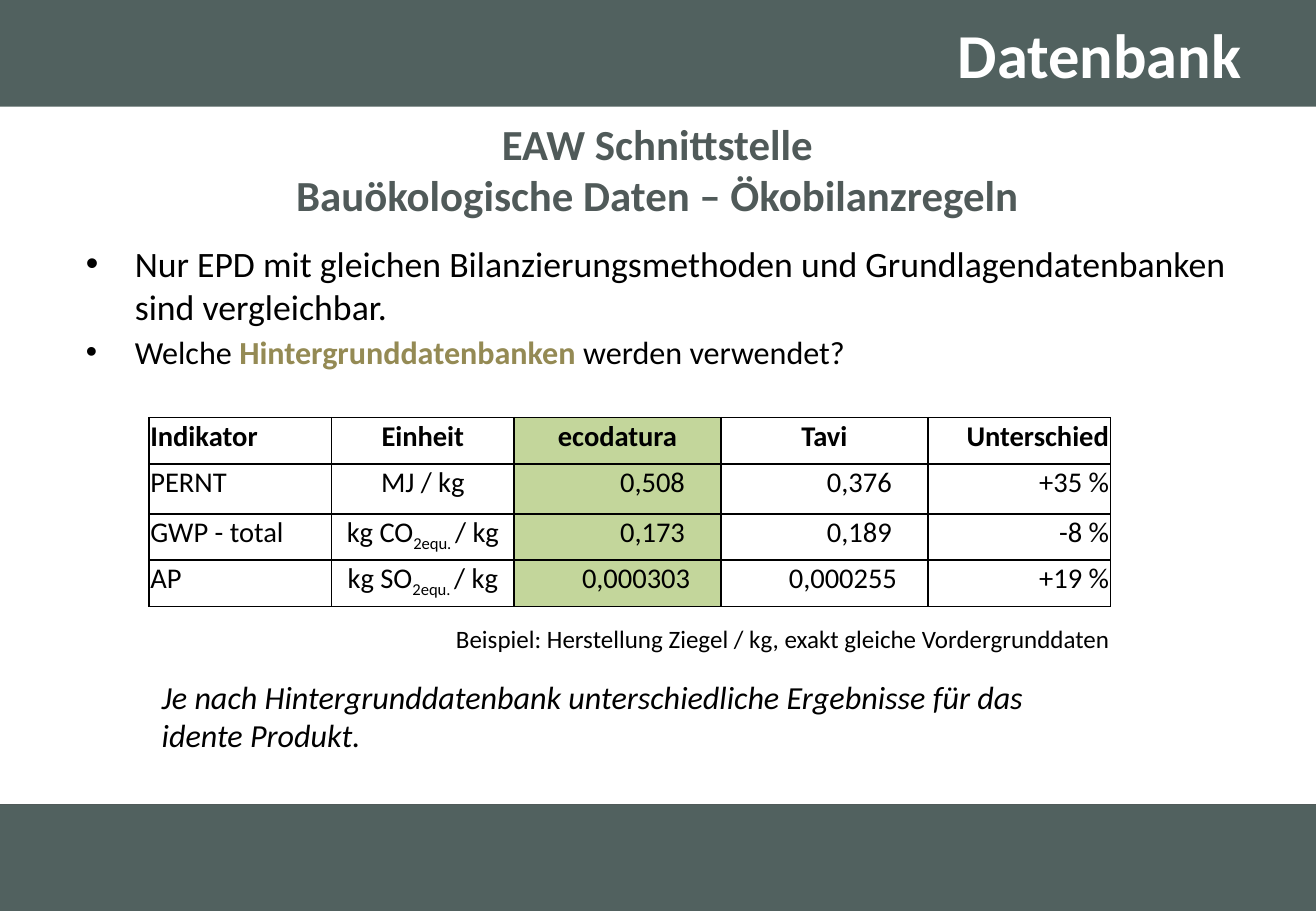
from lxml.etree import SubElement
from pptx import Presentation
from pptx.dml.color import RGBColor
from pptx.enum.shapes import MSO_CONNECTOR, MSO_SHAPE
from pptx.enum.text import MSO_ANCHOR, PP_ALIGN
from pptx.oxml.ns import qn
from pptx.util import Inches, Pt

SLATE, DARK_SLATE, OLIVE, GREEN = "51615F", "505A59", "948A54", "C3D69B"
BLACK, WHITE = "000000", "FFFFFF"
LEFT, CENTER, RIGHT = PP_ALIGN.LEFT, PP_ALIGN.CENTER, PP_ALIGN.RIGHT


def color(hex_code):
    return RGBColor.from_string(hex_code)


class SlideBuilder:
    """Draws on one slide; every length is a percentage of the slide's size."""

    font_name = "Calibri"

    def __init__(self, presentation):
        self.width = presentation.slide_width
        self.height = presentation.slide_height
        self.slide = presentation.slides.add_slide(presentation.slide_layouts[6])
        self.shapes = self.slide.shapes

    def x(self, percent):
        return round(self.width * percent / 100)

    def y(self, percent):
        return round(self.height * percent / 100)

    def box(self, left, top, width, height):
        return self.x(left), self.y(top), self.x(width), self.y(height)

    def band(self, top, height):
        band = self.shapes.add_shape(MSO_SHAPE.RECTANGLE, *self.box(0, top, 100, height))
        band.shadow.inherit = False
        band.fill.solid()
        band.fill.fore_color.rgb = color(SLATE)
        band.line.fill.background()

    def rule(self, top):
        rule = self.shapes.add_connector(
            MSO_CONNECTOR.STRAIGHT, 0, self.y(top), self.width, self.y(top))
        rule.line.color.rgb = color(DARK_SLATE)
        rule.line.width = Pt(0.75)
        SubElement(rule._element.spPr, qn("a:effectLst"))

    def style(self, paragraph, size, ink=BLACK, bold=False, italic=False, align=LEFT):
        paragraph.alignment = align
        font = paragraph.font
        font.name, font.size = self.font_name, Pt(size)
        font.bold, font.italic = bold, italic
        font.color.rgb = color(ink)

    def text(self, area, content, size, anchor=MSO_ANCHOR.TOP, wrap=True, **look):
        frame = self.shapes.add_textbox(*self.box(*area)).text_frame
        frame.word_wrap = wrap
        frame.vertical_anchor = anchor
        paragraph = frame.paragraphs[0]
        paragraph.text = content
        self.style(paragraph, size, **look)
        return paragraph

    def bullets(self, area, items):
        """Each item is a size and a list of (text, is_highlighted) parts."""
        frame = self.shapes.add_textbox(*self.box(*area)).text_frame
        frame.word_wrap = True
        for index, (size, parts) in enumerate(items):
            paragraph = frame.add_paragraph() if index else frame.paragraphs[0]
            if index:
                paragraph.space_before = Pt(3)
            properties = paragraph._p.get_or_add_pPr()
            properties.set("marL", str(Inches(0.38)))
            properties.set("indent", str(-Inches(0.38)))
            SubElement(properties, qn("a:buFont"), typeface="Arial")
            SubElement(properties, qn("a:buChar"), char="•")
            self.style(paragraph, size)
            for part, highlighted in parts:
                run = paragraph.add_run()
                run.text = part
                if highlighted:
                    run.font.bold = True
                    run.font.color.rgb = color(OLIVE)

    def border(self, cell):
        properties = cell._tc.get_or_add_tcPr()
        for index, side in enumerate(("a:lnL", "a:lnR", "a:lnT", "a:lnB")):
            line = properties.makeelement(qn(side), {"w": str(Pt(1))})
            fill = SubElement(line, qn("a:solidFill"))
            SubElement(fill, qn("a:srgbClr"), val=BLACK)
            properties.insert(index, line)

    def table(self, left, top, columns, rows, content, aligns, highlight, number_margins):
        """Number columns are right-aligned, with one right margin for each row."""
        area = self.box(left, top, sum(columns), sum(rows))
        table = self.shapes.add_table(len(rows), len(columns), *area).table
        for column, width in zip(table.columns, columns):
            column.width = self.x(width)
        for row, height in zip(table.rows, rows):
            row.height = self.y(height)
        for r, values in enumerate(content):
            for c, value in enumerate(values):
                cell = table.cell(r, c)
                cell.margin_left = cell.margin_right = cell.margin_top = Inches(0.01)
                cell.margin_bottom = 0
                if c == highlight:
                    cell.fill.solid()
                    cell.fill.fore_color.rgb = color(GREEN)
                else:
                    cell.fill.background()
                self.border(cell)
                align = aligns[c]
                if r and c in (2, 3):
                    align = RIGHT
                    cell.margin_right = Inches(number_margins[r - 1])
                paragraph = cell.text_frame.paragraphs[0]
                self.style(paragraph, 16, bold=r == 0, align=align)
                for index, part in enumerate(value.split("_")):
                    run = paragraph.add_run()
                    run.text = part
                    if index == 1:
                        run._r.get_or_add_rPr().set("baseline", "-25000")


def main():
    presentation = Presentation()
    presentation.slide_width, presentation.slide_height = Inches(10.24), Inches(7.09)
    page = SlideBuilder(presentation)

    band_height = 11.71
    footer_top = 100 - band_height
    page.band(footer_top, band_height)
    page.band(0, band_height)
    page.rule(footer_top)

    title = page.text((35.35, 1.83, 59.96, 9.17), "Datenbank", 35,
                      anchor=MSO_ANCHOR.MIDDLE, ink=WHITE, bold=True, align=RIGHT)
    title.line_spacing = 0.9
    page.text((4.98, 13.96, 89.94, 9.17),
              "EAW Schnittstelle\nBauökologische Daten – Ökobilanzregeln", 24,
              anchor=MSO_ANCHOR.MIDDLE, ink=DARK_SLATE, bold=True, align=CENTER)
    page.bullets((5.57, 25.81, 89.94, 61.92), [
        (20, [("Nur EPD mit gleichen Bilanzierungsmethoden und "
               "Grundlagendatenbanken sind vergleichbar.", False)]),
        (18, [("Welche ", False), ("Hintergrunddatenbanken", True),
              (" werden verwendet?", False)]),
    ])

    table_left, table_width = 11.33, 73.05
    page.table(
        table_left, 45.84,
        columns=[13.87, 13.87, 15.72, 15.72, 13.87],
        rows=[5.08, 5.5, 5.08, 5.08],
        content=[
            ["Indikator", "Einheit", "ecodatura", "Tavi", "Unterschied"],
            ["PERNT", "MJ / kg", "0,508", "0,376", "+35 %"],
            ["GWP - total", "kg CO_2equ. _/ kg", "0,173", "0,189", "-8 %"],
            ["AP", "kg SO_2equ. _/ kg", "0,000303", "0,000255", "+19 %"],
        ],
        aligns=[LEFT, CENTER, CENTER, CENTER, RIGHT],
        highlight=2,
        number_margins=[0.28, 0.28, 0.24],
    )
    page.text((table_left, 73.62, table_width, 10.01),
              "Je nach Hintergrunddatenbank unterschiedliche Ergebnisse "
              "für das idente Produkt.", 18, italic=True)
    page.text((33.69, 67.7, 52.15, 4.8),
              "Beispiel: Herstellung Ziegel / kg, exakt gleiche Vordergrunddaten",
              14, wrap=False)

    presentation.save("out.pptx")


if __name__ == "__main__":
    main()
